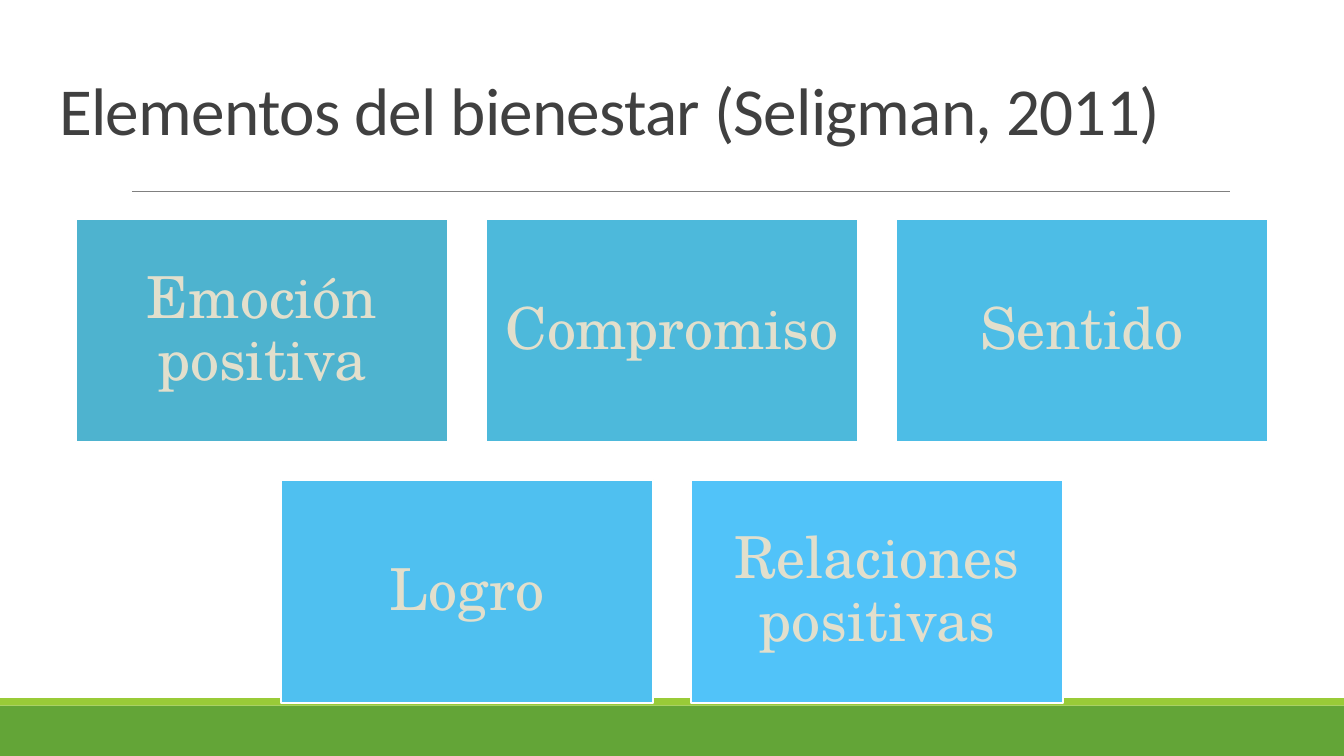
from lxml import etree
from pptx import Presentation
from pptx.dml.color import RGBColor
from pptx.enum.shapes import MSO_CONNECTOR, MSO_SHAPE
from pptx.enum.text import MSO_ANCHOR, MSO_AUTO_SIZE, PP_ALIGN
from pptx.oxml.ns import qn
from pptx.util import Pt

RECTANGLE = MSO_SHAPE.RECTANGLE
STRAIGHT = MSO_CONNECTOR.STRAIGHT
MIDDLE, BOTTOM = MSO_ANCHOR.MIDDLE, MSO_ANCHOR.BOTTOM
CENTER, LEFT = PP_ALIGN.CENTER, PP_ALIGN.LEFT
NO_AUTOFIT = MSO_AUTO_SIZE.NONE
TITLE_ONLY = 5
SLIDE_WIDTH, SLIDE_HEIGHT = 720, 405


def color(hex_code):
    return RGBColor.from_string(hex_code)


def add_block(left, top, width, height, fill):
    block = slide.shapes.add_shape(RECTANGLE, Pt(left), Pt(top), Pt(width), Pt(height))
    block.shadow.inherit = False
    block.fill.solid()
    block.fill.fore_color.rgb = color(fill)
    block.line.fill.background()
    return block


prs = Presentation()
prs.slide_width, prs.slide_height = Pt(SLIDE_WIDTH), Pt(SLIDE_HEIGHT)
slide = prs.slides.add_slide(prs.slide_layouts[TITLE_ONLY])
slide.background.fill.solid()
slide.background.fill.fore_color.rgb = color("FFFFFF")

add_block(0, 378, SLIDE_WIDTH, 27, "63A537")
add_block(0, 374, SLIDE_WIDTH, 4, "99CB38")

divider = slide.shapes.add_connector(STRAIGHT, Pt(70.6), Pt(102.6), Pt(659), Pt(102.6))
divider.line.color.rgb = color("808080")
divider.line.width = Pt(0.5)
etree.SubElement(divider._element.spPr, qn("a:effectLst"))

title = slide.shapes.title
title.left, title.top, title.width, title.height = Pt(24.5), Pt(26), Pt(671), Pt(57.6)
title.text_frame.auto_size = NO_AUTOFIT
title.text_frame.word_wrap = True
title.text_frame.vertical_anchor = BOTTOM
heading = title.text_frame.paragraphs[0]
heading.alignment = LEFT
heading.line_spacing = 0.85
heading_run = heading.add_run()
heading_run.text = "Elementos del bienestar (Seligman, 2011)"
heading_run.font.name = "Calibri"
heading_run.font.size = Pt(36)
heading_run.font.color.rgb = color("404040")
heading_run.font._element.set("spc", "-40")

element_rows = [
    [("Emoción positiva", "4EB3CF"), ("Compromiso", "4DB9DB"), ("Sentido", "4DBDE6")],
    [("Logro", "4FC0F0"), ("Relaciones positivas", "51C3F9")],
]
CARD_WIDTH, CARD_HEIGHT, GAP = 199.4, 119.5, 20.2
FIRST_ROW_TOP = 117.4

for row_index, elements in enumerate(element_rows):
    row_width = len(elements) * (CARD_WIDTH + GAP) - GAP
    row_left = (SLIDE_WIDTH - row_width) / 2
    top = FIRST_ROW_TOP + row_index * (CARD_HEIGHT + GAP)
    for column, (element, fill) in enumerate(elements):
        left = row_left + column * (CARD_WIDTH + GAP)
        card = add_block(left, top, CARD_WIDTH, CARD_HEIGHT, fill)
        card.line.color.rgb = color("FFFFFF")
        card.line.width = Pt(1.25)
        frame = card.text_frame
        frame.word_wrap = True
        frame.vertical_anchor = MIDDLE
        frame.margin_left = frame.margin_right = Pt(9.3)
        frame.margin_top = frame.margin_bottom = Pt(9.3)
        label = frame.paragraphs[0]
        label.alignment = CENTER
        label.line_spacing = 0.9
        label_run = label.add_run()
        label_run.text = element
        label_run.font.name = "TeX Gyre Schola"
        label_run.font.size = Pt(31)
        label_run.font.color.rgb = color("E2DFCC")

prs.save("out.pptx")
